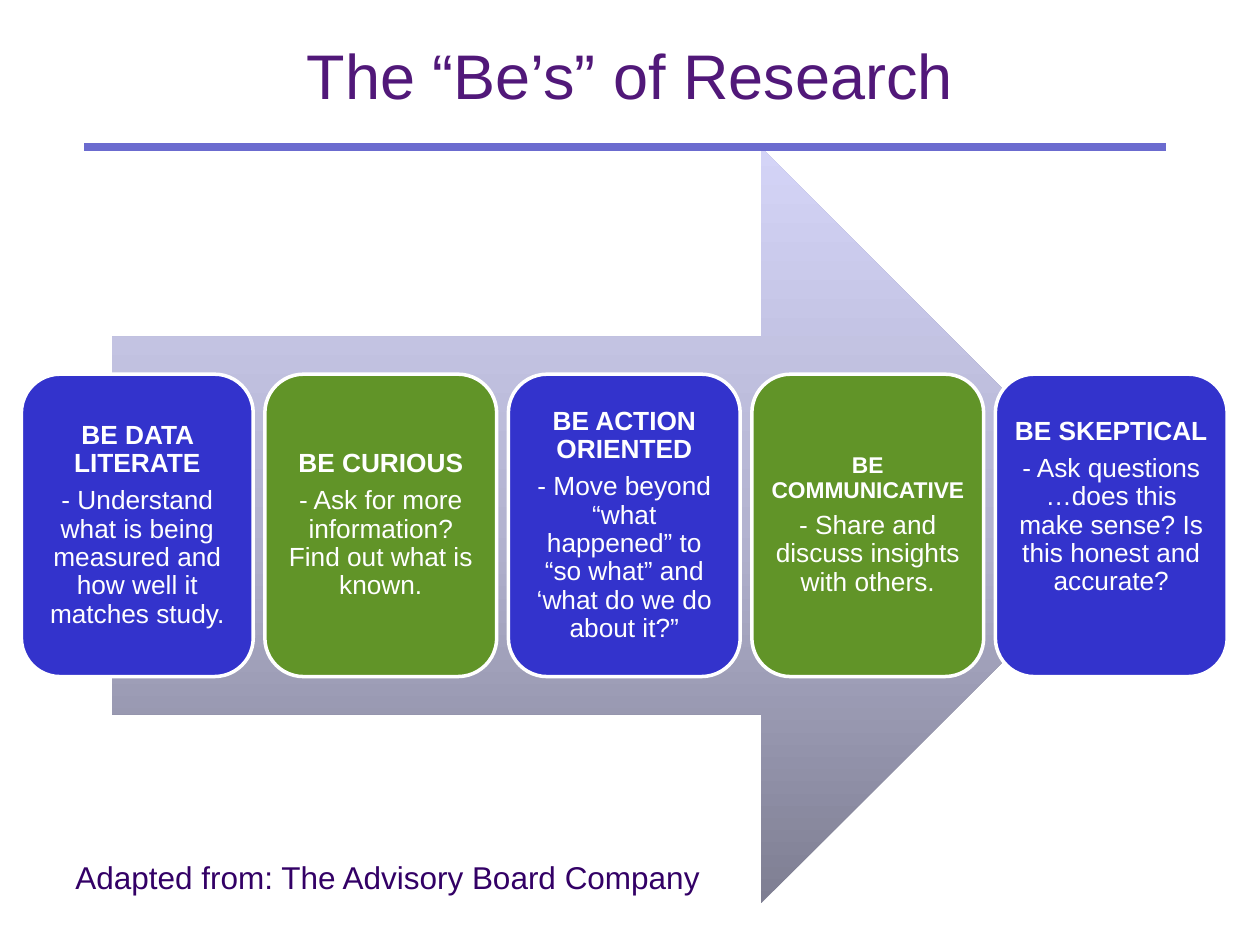
"""Build the slide on the "Be's" of research: five cards over a broad arrow."""
from lxml import etree
from pptx import Presentation
from pptx.dml.color import RGBColor
from pptx.enum import shapes, text
from pptx.oxml import parse_xml
from pptx.oxml.ns import nsdecls, qn
from pptx.util import Pt

TITLE = "The “Be’s” of Research"
SOURCE = "Adapted from: The Advisory Board Company"
CARDS = [
    {"heading": "BE DATA LITERATE",
     "body": "- Understand what is being measured and how well it matches study."},
    {"heading": "BE CURIOUS",
     "body": "- Ask for more information? Find out what is known."},
    {"heading": "BE ACTION ORIENTED",
     "body": "- Move beyond “what happened” to “so what” and ‘what do we do about it?”"},
    {"heading": "BE COMMUNICATIVE", "heading_size": 13, "inset": 3.6,
     "body": "- Share and discuss insights with others."},
    {"heading": "BE SKEPTICAL", "lift": 21,
     "body": "- Ask questions …does this make sense? Is this honest and accurate?"},
]
COLORS = {"title": "511879", "source": "330066", "rule": "6B6BCF",
          "blue": "3333CC", "green": "619428", "white": "FFFFFF"}
ARROW_STOPS = [(0, "7E7E92"), (50, "B3B3D0"), (100, "D4D4F7")]
FONT = "Arial"
CARD_LEFT, CARD_TOP, CARD_WIDTH, CARD_HEIGHT = 12.24, 213.84, 132.5, 172.8
CARD_PITCH = 139.14
RULE_Y = 84.24


def color(name):
    return RGBColor.from_string(COLORS[name])


def style(paragraph, size, color_name, bold=False):
    for run in paragraph.runs:
        run.font.name = FONT
        run.font.size = Pt(size)
        run.font.bold = bold
        run.font.color.rgb = color(color_name)


def add_label(slide, box, content, size, color_name):
    shape = slide.shapes.add_textbox(*map(Pt, box))
    shape.text_frame.word_wrap = True
    shape.text_frame.text = content
    paragraph = shape.text_frame.paragraphs[0]
    style(paragraph, size, color_name)
    return paragraph


def add_arrow(slide):
    shape = slide.shapes.add_shape(
        shapes.MSO_SHAPE.RIGHT_ARROW, Pt(64.08), Pt(RULE_Y), Pt(586.8), Pt(432))
    shape.shadow.inherit = False
    shape.line.fill.background()
    stops = "".join(f'<a:gs pos="{position * 1000}"><a:srgbClr val="{value}"/></a:gs>'
                    for position, value in ARROW_STOPS)
    gradient = parse_xml(f'<a:gradFill {nsdecls("a")} rotWithShape="1"><a:gsLst>{stops}'
                         '</a:gsLst><a:lin ang="16200000" scaled="0"/></a:gradFill>')
    shape._element.spPr.find(qn("a:prstGeom")).addnext(gradient)


def add_card(slide, index, card):
    shape = slide.shapes.add_shape(
        shapes.MSO_SHAPE.ROUNDED_RECTANGLE, Pt(CARD_LEFT + index * CARD_PITCH),
        Pt(CARD_TOP), Pt(CARD_WIDTH), Pt(CARD_HEIGHT))
    shape.shadow.inherit = False
    shape.fill.solid()
    shape.fill.fore_color.rgb = color(("blue", "green")[index % 2])
    shape.line.color.rgb = color("white")
    shape.line.width = Pt(2)
    frame = shape.text_frame
    frame.word_wrap = True
    frame.vertical_anchor = text.MSO_ANCHOR.MIDDLE
    inset = card.get("inset", 4.5)
    frame.margin_left = frame.margin_right = frame.margin_top = Pt(inset)
    frame.margin_bottom = Pt(inset + card.get("lift", 0))
    frame.text = card["heading"] + "\n" + card["body"]
    heading, body = frame.paragraphs
    style(heading, card.get("heading_size", 15), "white", bold=True)
    style(body, 15, "white")
    for paragraph in frame.paragraphs:
        paragraph.alignment = text.PP_ALIGN.CENTER
        paragraph.line_spacing = 0.9
        paragraph.space_after = Pt(5)


def add_rule(slide):
    rule = slide.shapes.add_connector(
        shapes.MSO_CONNECTOR.STRAIGHT, Pt(48.24), Pt(RULE_Y), Pt(666), Pt(RULE_Y))
    rule.line.color.rgb = color("rule")
    rule.line.width = Pt(4.5)
    etree.SubElement(rule._element.spPr, qn("a:effectLst"))


def main():
    presentation = Presentation()
    presentation.slide_width, presentation.slide_height = Pt(720), Pt(540)
    slide = presentation.slides.add_slide(presentation.slide_layouts[6])
    title = add_label(slide, (36, 23.76, 648, 90), TITLE, 36, "title")
    title.alignment = text.PP_ALIGN.CENTER
    title.line_spacing = 0.85
    add_arrow(slide)
    for index, card in enumerate(CARDS):
        add_card(slide, index, card)
    add_rule(slide)
    add_label(slide, (36, 486.72, 401.76, 28.8), SOURCE, 18, "source")
    presentation.save("out.pptx")


if __name__ == "__main__":
    main()
